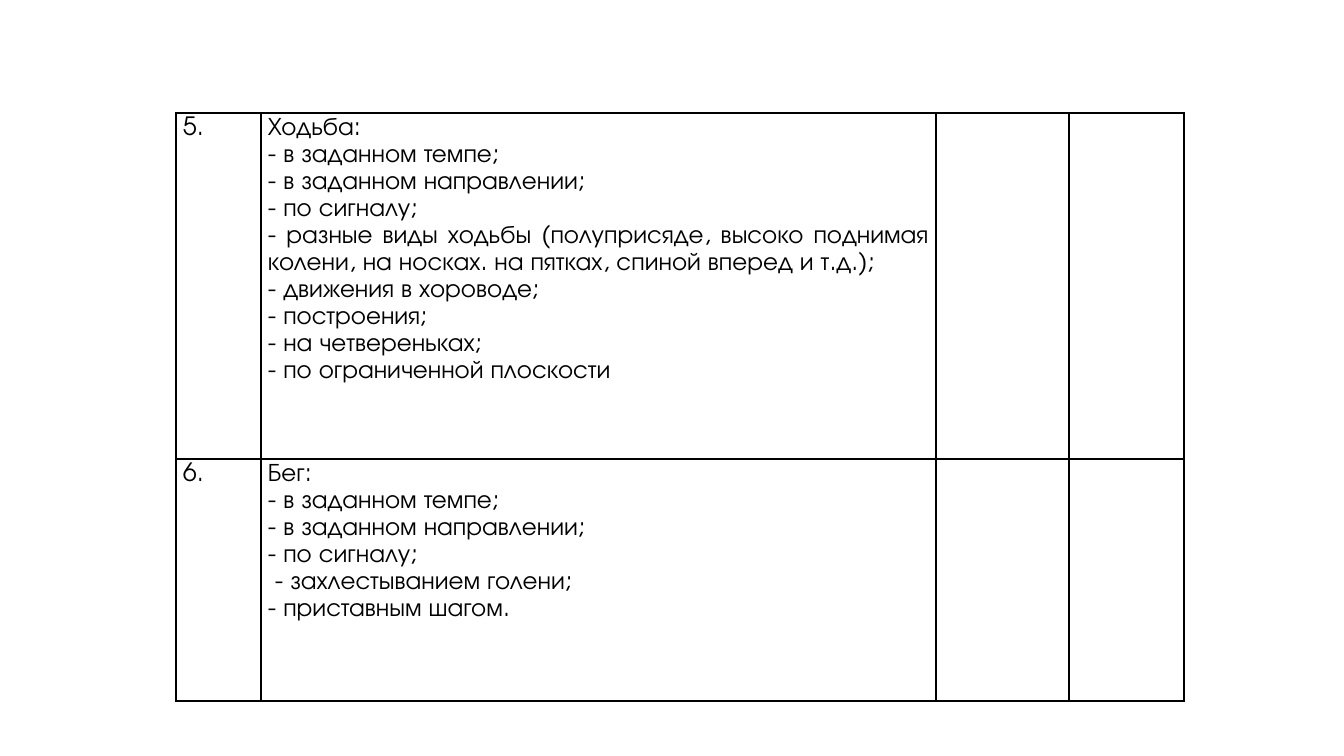
from lxml import etree
from pptx import Presentation
from pptx.dml.color import RGBColor
from pptx.enum.text import PP_ALIGN
from pptx.oxml.ns import qn
from pptx.util import Pt

PX = 9071  # EMU per px at 100.8 px to the inch
FONT = "TeX Gyre Adventor"
COLUMN_WIDTHS = [85, 675, 133, 115]
ROW_HEIGHTS = [346, 242]
EXERCISES = [
    ("5.\u00a0", [
        "Ходьба:",
        "- в заданном темпе;",
        "- в заданном направлении;",
        "- по сигналу;",
        "- разные виды ходьбы (полуприсяде, высоко поднимая колени, "
        "на носках. на пятках, спиной вперед и т.д.);",
        "- движения в хороводе;",
        "- построения; ",
        "- на четвереньках;",
        "- по ограниченной плоскости",
    ]),
    ("6.\u00a0", [
        "Бег:",
        "- в заданном темпе;",
        "- в заданном направлении;",
        "- по сигналу;",
        " - захлестыванием голени;",
        "- приставным шагом.",
    ]),
]


def px(length):
    return length * PX


def color(hex_value):
    return RGBColor.from_string(hex_value)


def add_borders(cell, hex_value):
    properties = cell._tc.get_or_add_tcPr()
    for side in ("lnL", "lnR", "lnT", "lnB"):
        line = etree.SubElement(properties, qn(f"a:{side}"), w=str(Pt(1)))
        fill = etree.SubElement(line, qn("a:solidFill"))
        etree.SubElement(fill, qn("a:srgbClr"), val=hex_value)


def style_cell(cell):
    add_borders(cell, "000000")
    cell.fill.background()
    cell.margin_left = cell.margin_right = px(7)
    cell.margin_top = cell.margin_bottom = 0
    for paragraph in cell.text_frame.paragraphs:
        paragraph.alignment = PP_ALIGN.JUSTIFY
        paragraph.line_spacing = 1.15
        paragraph.font.size = Pt(18)
        for run in paragraph.runs:
            run.font.name = FONT
            run.font.size = Pt(18)
            run.font.color.rgb = color("000000")


def add_exercise_table(slide, left, top):
    frame = slide.shapes.add_table(
        len(ROW_HEIGHTS), len(COLUMN_WIDTHS), px(left), px(top),
        px(sum(COLUMN_WIDTHS)), px(sum(ROW_HEIGHTS)))
    table = frame.table
    table.first_row = table.horz_banding = False
    for column, width in zip(table.columns, COLUMN_WIDTHS):
        column.width = px(width)
    for row, height, (number, movements) in zip(table.rows, ROW_HEIGHTS, EXERCISES):
        row.height = px(height)
        row.cells[0].text_frame.text = number
        row.cells[1].text_frame.text = "\n".join(movements)
        for cell in row.cells:
            style_cell(cell)


def main():
    presentation = Presentation()
    presentation.slide_width = px(1344)
    presentation.slide_height = px(756)
    slide = presentation.slides.add_slide(presentation.slide_layouts[6])
    add_exercise_table(slide, 176, 113)
    presentation.save("out.pptx")


if __name__ == "__main__":
    main()
